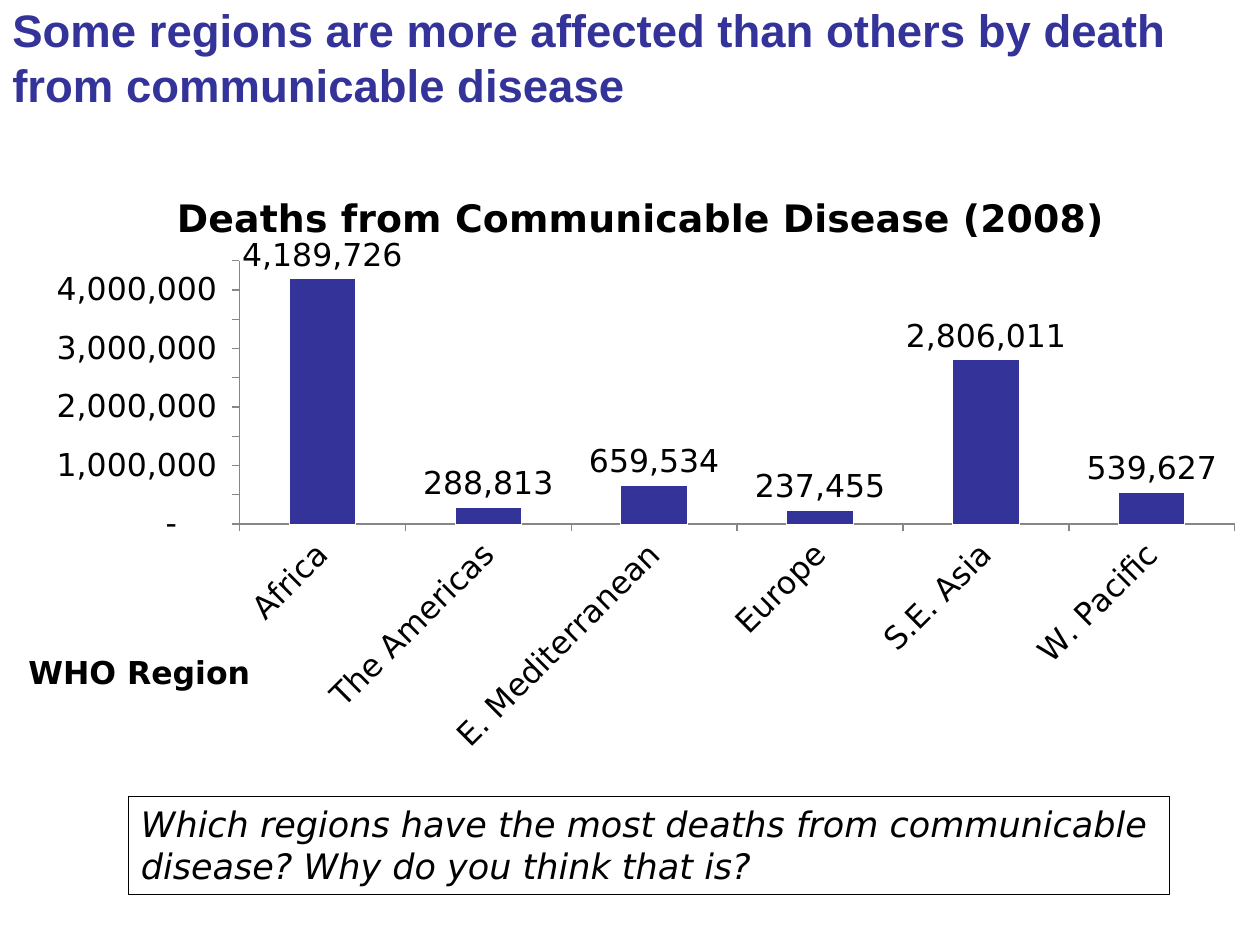
from lxml import etree
from pptx import Presentation
from pptx.chart.data import CategoryChartData
from pptx.dml.color import RGBColor
from pptx.enum.chart import XL_CHART_TYPE as ChartType, XL_LABEL_POSITION as LabelPosition
from pptx.enum.chart import XL_TICK_MARK as TickMark
from pptx.enum.shapes import MSO_SHAPE as Shape
from pptx.enum.text import MSO_ANCHOR as Anchor, PP_ALIGN as Align
from pptx.oxml import parse_xml
from pptx.oxml.ns import nsdecls, qn
from pptx.util import Inches, Pt

HEADING = "Some regions are more affected than others by death from communicable disease"
QUESTION = "Which regions have the most deaths from communicable disease? Why do you think that is?"
CHART_TITLE = "Deaths from Communicable Disease (2008)"
AXIS_TITLE = "WHO Region"
DEATHS = {
    "Africa": 4189726,
    "The Americas": 288813,
    "E. Mediterranean": 659534,
    "Europe": 237455,
    "S.E. Asia": 2806011,
    "W. Pacific": 539627,
}
NUMBER_FORMAT = r'_(* #,##0_);_(* \(#,##0\);_(* "-"??_);_('
COLORS = {"blue": "333399", "black": "000000", "white": "FFFFFF", "axis": "868686"}
HEADING_FONT, BODY_FONT = "Arial", "DejaVu Sans"

CHART_AREA = (0.18, 1.35, 9.82, 5.34)
PLOT_AREA = (1.9, 2.07, 7.9, 2.09)
CHART_TITLE_AT = (1.35, 1.47)
AXIS_TITLE_AT = (0.18, 5.13)


def color(name):
    return RGBColor.from_string(COLORS[name])


def style(font, size, face=BODY_FONT, ink="black", bold=False, italic=False):
    font.name, font.size = face, Pt(size)
    font.bold, font.italic = bold, italic
    font.color.rgb = color(ink)


def write(frame, text, anchor=Anchor.TOP, align=Align.LEFT, **look):
    frame.word_wrap = True
    frame.vertical_anchor = anchor
    para = frame.paragraphs[0]
    para.alignment = align
    span = para.add_run()
    span.text = text
    style(span.font, **look)


def place(element, left, top, *size, inner=False):
    """Fix a chart part at a slide position, given in inches."""
    x, y, width, height = CHART_AREA
    shares = [(left - x) / width, (top - y) / height]
    shares += [length / whole for length, whole in zip(size, (width, height))]
    layout = parse_xml(f"<c:layout {nsdecls('c')}><c:manualLayout/></c:layout>")
    manual = layout[0]
    settings = [("layoutTarget", "inner")] if inner else []
    settings += [("xMode", "edge"), ("yMode", "edge")]
    settings += [(key, f"{share:.4f}") for key, share in zip("xywh", shares)]
    for key, value in settings:
        etree.SubElement(manual, qn(f"c:{key}")).set("val", value)
    for old in element.findall(qn("c:layout")):
        element.remove(old)
    text = element.find(qn("c:tx"))
    element.insert(0 if text is None else 1, layout)


def add_deaths_chart(page):
    data = CategoryChartData()
    data.categories = list(DEATHS)
    data.add_series("Series 1", list(DEATHS.values()))
    area = [Inches(length) for length in CHART_AREA]
    chart = page.shapes.add_chart(ChartType.COLUMN_CLUSTERED, *area, data).chart
    chart.has_legend = False
    style(chart.font, 18)

    write(chart.chart_title.text_frame, CHART_TITLE, align=Align.CENTER, size=21.6, bold=True)
    chart.chart_title.include_in_layout = False
    regions, values = chart.category_axis, chart.value_axis
    write(regions.axis_title.text_frame, AXIS_TITLE, align=Align.CENTER, size=18, bold=True)
    place(chart.chart_title._element, *CHART_TITLE_AT)
    place(regions.axis_title._element, *AXIS_TITLE_AT)
    place(chart._chartSpace.chart.plotArea, *PLOT_AREA, inner=True)

    for axis in (regions, values):
        axis.has_major_gridlines = False
        axis.major_tick_mark = TickMark.OUTSIDE
        axis.minor_tick_mark = TickMark.NONE
        axis.format.line.color.rgb = color("axis")
        axis.format.line.width = Pt(0.75)
        style(axis.tick_labels.font, 18)
    regions._element.find(qn("c:txPr")).find(qn("a:bodyPr")).set("rot", str(-45 * 60000))
    values.minimum_scale, values.maximum_scale = 0, 4500000
    values.major_unit = 500000
    values.tick_labels.number_format = NUMBER_FORMAT
    values.tick_labels.number_format_is_linked = False

    plot = chart.plots[0]
    plot.gap_width = 150
    plot.vary_by_categories = False
    bars = plot.series[0]
    bars.format.fill.solid()
    bars.format.fill.fore_color.rgb = color("blue")
    bars.format.line.color.rgb = color("white")
    labels = bars.data_labels
    labels.show_value = True
    labels.position = LabelPosition.OUTSIDE_END
    labels.number_format = NUMBER_FORMAT
    labels.number_format_is_linked = False
    style(labels.font, 18)


def main():
    deck = Presentation()
    deck.slide_width, deck.slide_height = Inches(10), Inches(7.5)
    page = deck.slides.add_slide(deck.slide_layouts[6])

    heading = page.shapes.add_textbox(0, 0, Inches(10), Inches(0.9))
    write(heading.text_frame, HEADING, anchor=Anchor.MIDDLE,
          size=26, face=HEADING_FONT, ink="blue", bold=True)

    question = page.shapes.add_shape(
        Shape.RECTANGLE, Inches(1.02), Inches(6.32), Inches(8.26), Inches(0.78))
    question.shadow.inherit = False
    question.fill.background()
    question.line.color.rgb = color("black")
    question.line.width = Pt(0.5)
    write(question.text_frame, QUESTION, size=20, italic=True)

    add_deaths_chart(page)
    deck.save("out.pptx")


if __name__ == "__main__":
    main()
